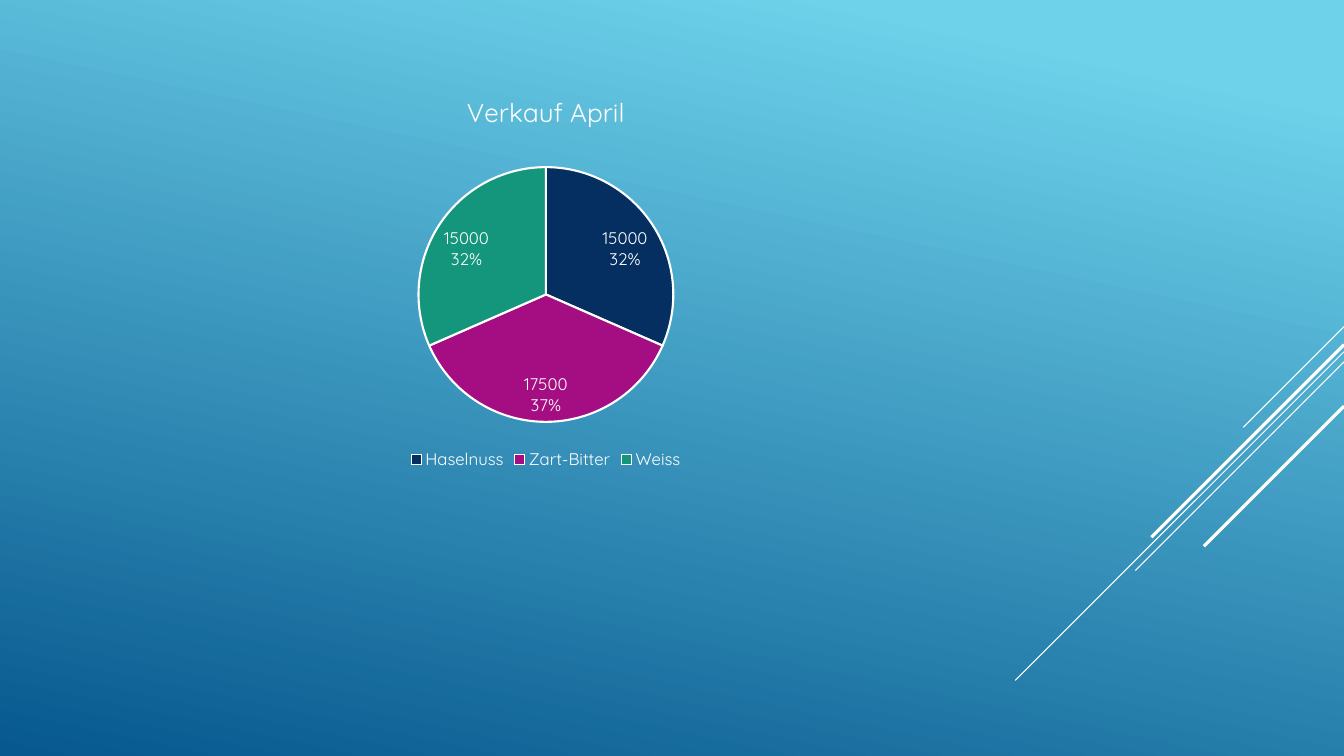
from lxml import etree
from pptx import Presentation
from pptx.chart.data import CategoryChartData
from pptx.dml.color import RGBColor
from pptx.enum.chart import XL_CHART_TYPE, XL_LABEL_POSITION, XL_LEGEND_POSITION
from pptx.enum.shapes import MSO_CONNECTOR
from pptx.oxml import parse_xml
from pptx.oxml.ns import nsdecls, qn
from pptx.util import Inches, Pt

FONT = "Quicksand"
WHITE = RGBColor(0xFF, 0xFF, 0xFF)
SKY = RGBColor(0x6E, 0xD2, 0xEB)
OCEAN = RGBColor(0x06, 0x58, 0x8E)
NAVY = RGBColor(0x05, 0x2F, 0x61)
MAGENTA = RGBColor(0xA5, 0x0E, 0x82)
GREEN = RGBColor(0x14, 0x96, 0x7C)


def style_font(font, size):
    font.name = FONT
    font.size = Pt(size)
    font.bold = False
    font.color.rgb = WHITE


presentation = Presentation()
presentation.slide_width = Inches(13.33)
presentation.slide_height = Inches(7.5)
slide = presentation.slides.add_slide(presentation.slide_layouts[6])

# Background gradient
background = slide.background.fill
background.gradient()
background.gradient_angle = 258
for stop, (position, color) in zip(background.gradient_stops, [(0.1, SKY), (1, OCEAN)]):
    stop.position = position
    stop.color.rgb = color

# Diagonal lines rising to the right edge: top, length along each axis, width
RIGHT_EDGE = 13.33
for top, reach, width in [
    (3.24, 1, 0.75),
    (3.49, 3.26, 0.75),
    (3.59, 2.07, 0.75),
    (3.42, 1.91, 2.25),
    (4.03, 1.39, 2.25),
]:
    diagonal = slide.shapes.add_connector(
        MSO_CONNECTOR.STRAIGHT,
        Inches(RIGHT_EDGE), Inches(top),
        Inches(RIGHT_EDGE - reach), Inches(top + reach),
    )
    diagonal.line.color.rgb = WHITE
    diagonal.line.width = Pt(width)
    etree.SubElement(diagonal._element.spPr, qn("a:effectLst"))

# Pie chart
sales = CategoryChartData()
sales.categories = ["Haselnuss", "Zart-Bitter", "Weiss"]
sales.add_series("Verkauf April", [15000, 17500, 15000])
chart = slide.shapes.add_chart(
    XL_CHART_TYPE.PIE, Inches(0.75), Inches(0.75), Inches(9.33), Inches(3.95), sales
).chart
style_font(chart.font, 10)

chart.has_title = True
title = chart.chart_title.text_frame
title.text = "Verkauf April"
style_font(title.paragraphs[0].font, 18.6)
chart.chart_title.include_in_layout = False

chart.has_legend = True
chart.legend.position = XL_LEGEND_POSITION.BOTTOM
chart.legend.include_in_layout = False
style_font(chart.legend.font, 12)

pie = chart.plots[0]
pie.vary_by_categories = True
series = pie.series[0]
for index, color in enumerate([NAVY, MAGENTA, GREEN]):
    slice_format = series.points[index].format
    slice_format.fill.solid()
    slice_format.fill.fore_color.rgb = color
    slice_format.line.color.rgb = WHITE
    slice_format.line.width = Pt(1.5)

labels = series.data_labels
style_font(labels.font, 12)
labels.show_value = True
labels.show_percentage = True
labels.position = XL_LABEL_POSITION.INSIDE_END
separator = etree.Element(qn("c:separator"))
separator.text = "\n"
labels._element.find(qn("c:showPercent")).addnext(separator)
bubble_size = labels._element.find(qn("c:showBubbleSize"))
if bubble_size is not None:
    bubble_size.addnext(separator)

# Fixed place of the pie inside the chart, as fractions of its size
plot_area = chart._chartSpace.chart.plotArea
for layout in plot_area.findall(qn("c:layout")):
    plot_area.remove(layout)
plot_area.insert(0, parse_xml(
    f'<c:layout {nsdecls("c")}><c:manualLayout><c:layoutTarget val="inner"/>'
    '<c:xMode val="edge"/><c:yMode val="edge"/>'
    '<c:x val="0.36"/><c:y val="0.23"/><c:w val="0.28"/><c:h val="0.64"/>'
    '</c:manualLayout></c:layout>'
))

presentation.save("out.pptx")
